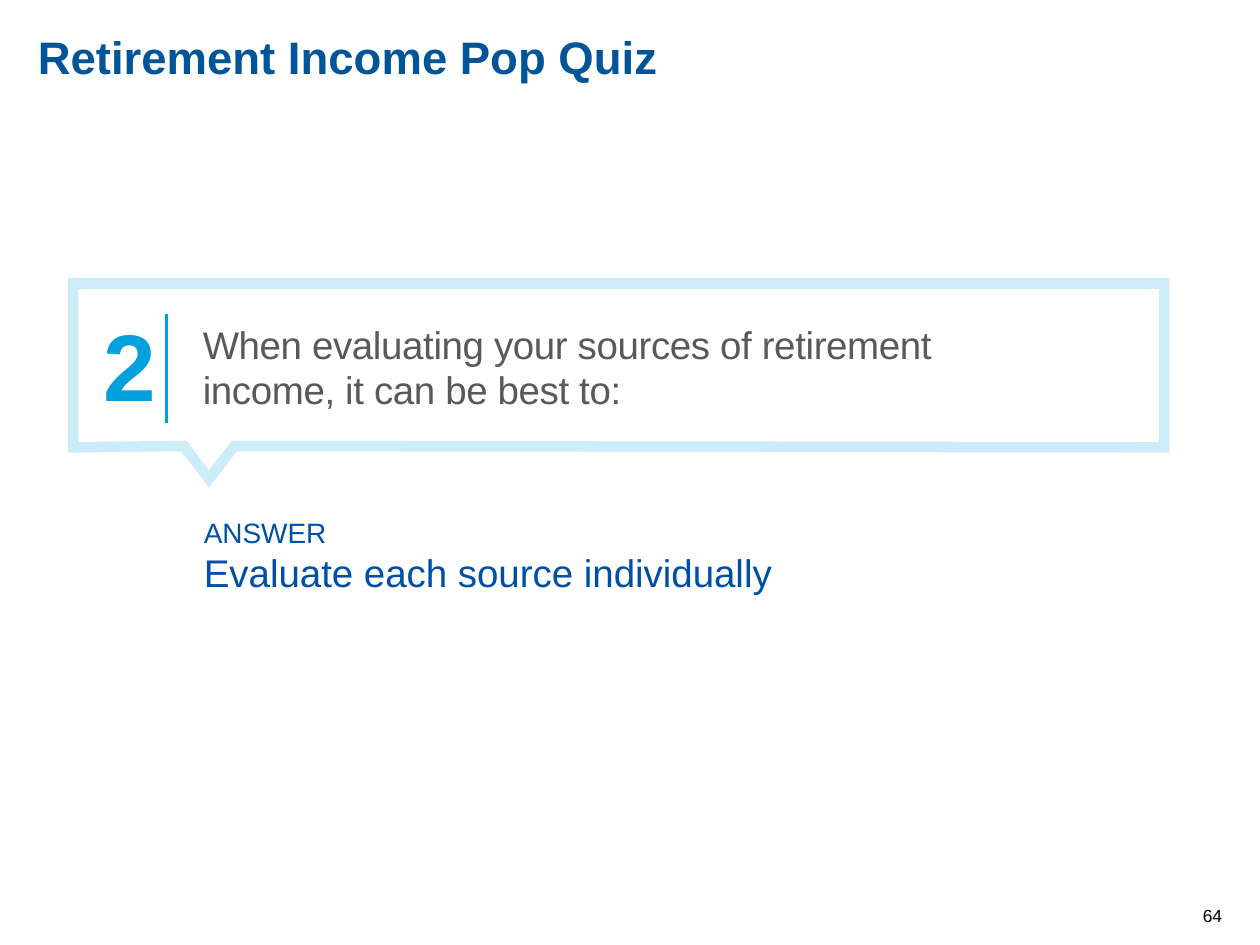
from lxml.etree import SubElement
from pptx import Presentation
from pptx.dml.color import RGBColor
from pptx.enum.shapes import MSO_CONNECTOR
from pptx.enum.text import MSO_ANCHOR, MSO_AUTO_SIZE, PP_ALIGN
from pptx.oxml.ns import qn
from pptx.util import Inches, Pt

TITLE_BLUE = RGBColor(0x00, 0x55, 0x98)
ANSWER_BLUE = RGBColor(0x00, 0x4F, 0xA6)
ACCENT = RGBColor(0x00, 0xA0, 0xDC)
PALE_BLUE = RGBColor(0xCC, 0xEC, 0xF8)
GRAY = RGBColor(0x59, 0x59, 0x59)
WHITE = RGBColor(0xFF, 0xFF, 0xFF)
BLACK = RGBColor(0x00, 0x00, 0x00)


def set_frame(frame, inset=(0, 0), **formats):
    """Apply horizontal and vertical insets in inches, then frame attributes."""
    horizontal, vertical = map(Inches, inset)
    values = dict(margin_left=horizontal, margin_right=horizontal,
                  margin_top=vertical, margin_bottom=vertical,
                  word_wrap=True, auto_size=MSO_AUTO_SIZE.NONE,
                  vertical_anchor=MSO_ANCHOR.TOP) | formats
    for name, value in values.items():
        setattr(frame, name, value)


def write(paragraph, text, size, color, bold=False, align=PP_ALIGN.LEFT):
    paragraph.alignment = align
    run = paragraph.add_run()
    run.text = text
    for name, value in dict(name="Arial", size=Pt(size), bold=bold).items():
        setattr(run.font, name, value)
    run.font.color.rgb = color
    return run


def add_text_box(slide, box, **formats):
    frame = slide.shapes.add_textbox(*map(Inches, box)).text_frame
    set_frame(frame, **formats)
    return frame


def add_title(slide, box, text):
    title = slide.shapes.title
    title.left, title.top, title.width, title.height = map(Inches, box)
    set_frame(title.text_frame)
    write(title.text_frame.paragraphs[0], text, 26, TITLE_BLUE, bold=True)


def add_bubble(slide, box):
    """Draw a rectangular speech bubble whose pointer hangs below the box."""
    left, top, width, height = box
    right, bottom = left + width, top + height
    tip, half_width, drop = left + 1.08, 0.2, 0.25
    builder = slide.shapes.build_freeform(Inches(left), Inches(top))
    points = [(right, top), (right, bottom), (tip + half_width, bottom - 0.01),
              (tip, bottom + drop), (tip - half_width, bottom - 0.01), (left, bottom)]
    builder.add_line_segments([(Inches(x), Inches(y)) for x, y in points], close=True)
    bubble = builder.convert_to_shape()
    bubble.shadow.inherit = False
    bubble.fill.solid()
    bubble.fill.fore_color.rgb = WHITE
    bubble.line.color.rgb = PALE_BLUE
    bubble.line.width = Pt(6)
    SubElement(bubble.line._get_or_add_ln(), qn("a:miter"), lim="800000")


def add_question(slide, box, number, text):
    left, top, width, height = box
    add_bubble(slide, box)
    frame = add_text_box(slide, (left + 0.14, top + 0.14, 0.62, 1.01), inset=(0.1, 0.05),
                         word_wrap=False, auto_size=MSO_AUTO_SIZE.SHAPE_TO_FIT_TEXT)
    write(frame.paragraphs[0], number, 54, ACCENT, bold=True)

    frame = add_text_box(slide, (left + 1.03, top + 0.3, 6.26, 0.74),
                         auto_size=MSO_AUTO_SIZE.SHAPE_TO_FIT_TEXT)
    paragraph = frame.paragraphs[0]
    paragraph.line_spacing = Pt(26)
    run = write(paragraph, text, 22, GRAY)
    run.font._element.set("spc", "-20")

    rule_x = Inches(left + 0.74)
    rule = slide.shapes.add_connector(MSO_CONNECTOR.STRAIGHT, rule_x, Inches(top + 0.24),
                                      rule_x, Inches(top + height - 0.19))
    rule.line.color.rgb = ACCENT
    rule.line.width = Pt(1.5)
    SubElement(rule._element.spPr, qn("a:effectLst"))


def add_answer(slide, box, label, answer):
    frame = add_text_box(slide, box, inset=(0.1, 0.05),
                         auto_size=MSO_AUTO_SIZE.SHAPE_TO_FIT_TEXT)
    paragraphs = [frame.paragraphs[0], frame.add_paragraph()]
    for paragraph, text, size in zip(paragraphs, (label, answer), (16, 22)):
        paragraph.level = 1
        properties = paragraph._p.get_or_add_pPr()
        properties.set("marL", str(Inches(0.19)))
        properties.set("indent", "0")
        write(paragraph, text, size, ANSWER_BLUE)


def add_page_number(slide, box, number):
    frame = add_text_box(slide, box, vertical_anchor=MSO_ANCHOR.BOTTOM)
    write(frame.paragraphs[0], number, 10, BLACK, align=PP_ALIGN.RIGHT)


def main():
    presentation = Presentation()
    presentation.slide_width, presentation.slide_height = Inches(10), Inches(7.5)
    slide = presentation.slides.add_slide(presentation.slide_layouts[5])
    add_title(slide, (0.3, 0.23, 7, 0.8), "Retirement Income Pop Quiz")
    add_question(slide, (0.58, 2.25, 8.66, 1.3), "2",
                 "When evaluating your sources of retirement income, it can be best to:")
    add_answer(slide, (1.33, 4.04, 7.46, 0.74), "ANSWER",
               "Evaluate each source individually")
    add_page_number(slide, (9.3, 7.15, 0.4, 0.2), "64")
    presentation.save("out.pptx")


if __name__ == "__main__":
    main()
